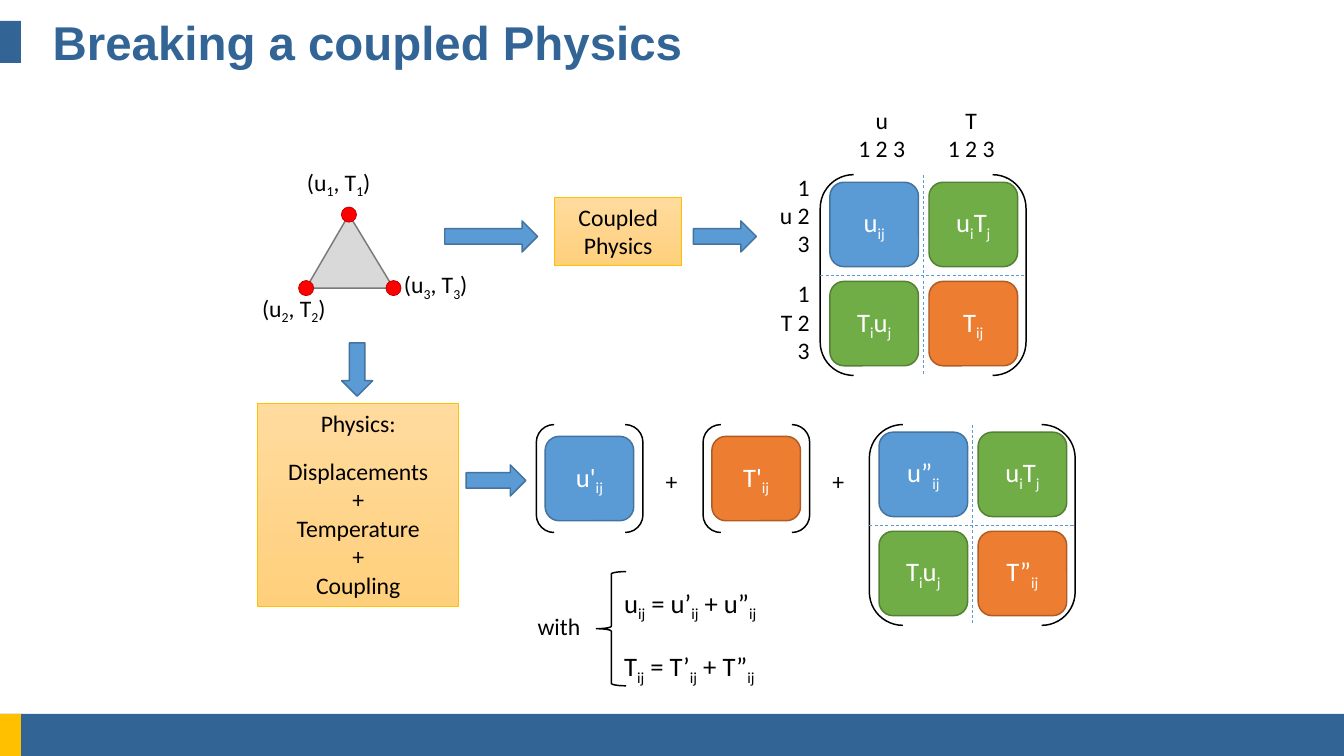
from lxml import etree
from pptx import Presentation
from pptx.dml.color import RGBColor
from pptx.enum.dml import MSO_LINE
from pptx.enum.shapes import MSO_CONNECTOR, MSO_SHAPE
from pptx.enum.text import MSO_ANCHOR, MSO_AUTO_SIZE, PP_ALIGN
from pptx.oxml.ns import qn
from pptx.util import Cm, Pt

BLACK = RGBColor(0x00, 0x00, 0x00)
WHITE = RGBColor(0xFF, 0xFF, 0xFF)
NAVY = RGBColor(0x32, 0x64, 0x96)
GOLD = RGBColor(0xFF, 0xC0, 0x00)
BLUE, BLUE_EDGE = RGBColor(0x5B, 0x9B, 0xD5), RGBColor(0x43, 0x73, 0x9E)
ORANGE, ORANGE_EDGE = RGBColor(0xED, 0x7D, 0x31), RGBColor(0xAF, 0x5C, 0x24)
GREEN, GREEN_EDGE = RGBColor(0x70, 0xAD, 0x47), RGBColor(0x53, 0x80, 0x35)
GRAY, GRAY_EDGE = RGBColor(0xD9, 0xD9, 0xD9), RGBColor(0x7A, 0x7A, 0x7A)
RED, RED_EDGE = RGBColor(0xFF, 0x00, 0x00), RGBColor(0xC0, 0x00, 0x00)
PEACH_TOP, PEACH_BOTTOM = RGBColor(0xFF, 0xDB, 0x9E), RGBColor(0xFF, 0xD0, 0x7C)

LEFT, CENTER, RIGHT = PP_ALIGN.LEFT, PP_ALIGN.CENTER, PP_ALIGN.RIGHT
TOP, MIDDLE = MSO_ANCHOR.TOP, MSO_ANCHOR.MIDDLE
NO_FIT, GROW = MSO_AUTO_SIZE.NONE, MSO_AUTO_SIZE.SHAPE_TO_FIT_TEXT
RECTANGLE, ROUNDED = MSO_SHAPE.RECTANGLE, MSO_SHAPE.ROUNDED_RECTANGLE
TRIANGLE, OVAL = MSO_SHAPE.ISOSCELES_TRIANGLE, MSO_SHAPE.OVAL
BRACKETS, BRACE = MSO_SHAPE.DOUBLE_BRACKET, MSO_SHAPE.LEFT_BRACE
ARROW, STRAIGHT, DASH = MSO_SHAPE.RIGHT_ARROW, MSO_CONNECTOR.STRAIGHT, MSO_LINE.DASH

TITLE_ONLY_LAYOUT = 5
CELL_WIDTH, CELL_HEIGHT, CELL_PITCH = 2.11, 2.01, 2.36
MATRIX_WIDTH, MATRIX_HEIGHT = 4.9, 4.78
ARROW_HEIGHT = 0.74


def add_shape(slide, kind, box, fill=None, edge=None, edge_width=1):
    """Add a flat preset shape in a box given in centimetres."""
    shape = slide.shapes.add_shape(kind, *map(Cm, box))
    shape.shadow.inherit = False
    if fill is None:
        shape.fill.background()
    else:
        shape.fill.solid()
        shape.fill.fore_color.rgb = fill
    if edge is None:
        shape.line.fill.background()
    else:
        shape.line.color.rgb = edge
        shape.line.width = Pt(edge_width)
    return shape


def write(text_frame, lines, size=16, color=BLACK, align=CENTER):
    """Write lines in which underscores enclose the subscripts."""
    for index, line in enumerate(lines):
        paragraph = text_frame.add_paragraph() if index else text_frame.paragraphs[0]
        paragraph.alignment = align
        paragraph.font.name = "Calibri"
        paragraph.font.size = Pt(size)
        paragraph.font.color.rgb = color
        for part, text in enumerate(line.split("_")):
            if text:
                run = paragraph.add_run()
                run.text = text
                if part % 2:
                    run._r.get_or_add_rPr().set("baseline", "-25000")


def add_label(slide, box, lines, size=16, align=LEFT):
    """Add an unwrapped text box."""
    text_frame = slide.shapes.add_textbox(*map(Cm, box)).text_frame
    text_frame.word_wrap = False
    text_frame.auto_size = GROW
    write(text_frame, lines, size, align=align)


def add_cell(slide, left, top, text, fill, edge):
    """Add one rounded matrix entry."""
    box = left, top, CELL_WIDTH, CELL_HEIGHT
    text_frame = add_shape(slide, ROUNDED, box, fill, edge).text_frame
    text_frame.margin_left = text_frame.margin_right = Cm(0.1)
    text_frame.vertical_anchor = MIDDLE
    write(text_frame, [text], 18, WHITE)


def add_divider(slide, bracket, begin_site, end_site):
    """Join two opposite sides of a bracket pair with a dashed line."""
    divider = slide.shapes.add_connector(STRAIGHT, 0, 0, 0, 0)
    divider.begin_connect(bracket, begin_site)
    divider.end_connect(bracket, end_site)
    divider.line.color.rgb = BLUE
    divider.line.width = Pt(0.5)
    divider.line.dash_style = DASH
    etree.SubElement(divider._element.spPr, qn("a:effectLst"))


def add_matrix(slide, left, top, displacement, temperature):
    """Add a bracketed two by two block matrix."""
    box = left, top, MATRIX_WIDTH, MATRIX_HEIGHT
    bracket = add_shape(slide, BRACKETS, box, edge=BLACK)
    add_divider(slide, bracket, 1, 3)
    add_divider(slide, bracket, 0, 2)
    cells = [
        (displacement, BLUE, BLUE_EDGE),
        ("u_i_T_j_", GREEN, GREEN_EDGE),
        ("T_i_u_j_", GREEN, GREEN_EDGE),
        (temperature, ORANGE, ORANGE_EDGE),
    ]
    for index, cell in enumerate(cells):
        row, column = divmod(index, 2)
        add_cell(slide, left + 0.23 + column * CELL_PITCH,
                 top + 0.18 + row * CELL_PITCH, *cell)


def add_matrix_headings(slide, left, top):
    """Number the columns and rows of the matrix at the given corner."""
    for name, column_left, row_top in (("u", 0.64, -0.18), ("T", 2.77, 2.36)):
        add_label(slide, (left + column_left, top - 1.77, 1.65, 1.63),
                  [name, "1 2 3"], align=CENTER)
        add_label(slide, (left - 1.22, top + row_top, 1.22, 2.31),
                  ["1", f"{name} 2", "3"], align=RIGHT)


def add_single_block(slide, left, top, text, fill, edge):
    """Add a bracketed single entry followed by a plus sign."""
    add_shape(slide, BRACKETS, (left, top, 2.54, 2.57), edge=BLACK)
    add_cell(slide, left + 0.21, top + 0.28, text, fill, edge)
    add_label(slide, (left + 2.83, top + 0.89, 0.79, 0.94), ["+"])


def add_element(slide, left, top, width, height):
    """Add the triangular element with its three labelled nodes."""
    apex = 0.49
    triangle = add_shape(slide, TRIANGLE, (left, top, width, height), GRAY, GRAY_EDGE)
    triangle.adjustments[0] = apex
    diameter = 0.36
    nodes = [
        (apex * width, 0, -0.23, -1.25),
        (0, height, -1.3, height),
        (width, height, width, 1.19),
    ]
    for number, (x, y, label_x, label_y) in enumerate(nodes, 1):
        dot = left + x - diameter / 2, top + y - diameter / 2, diameter, diameter
        add_shape(slide, OVAL, dot, RED, RED_EDGE, 0.5)
        add_label(slide, (left + label_x, top + label_y, 2.08, 0.94),
                  [f"(u_{number}_, T_{number}_)"])


def add_physics_box(slide, box, lines):
    """Add a peach box naming the physics and return its text frame."""
    shape = add_shape(slide, RECTANGLE, box, PEACH_TOP, GOLD, 0.5)
    shape.fill.gradient()
    shape.fill.gradient_angle = 270
    for stop, color in zip(shape.fill.gradient_stops, (PEACH_TOP, PEACH_BOTTOM)):
        stop.color.rgb = color
    shape.text_frame.vertical_anchor = TOP
    write(shape.text_frame, lines)
    return shape.text_frame


def add_definitions(slide, left, top):
    """Add the braced definitions of the split terms."""
    add_label(slide, (left, top + 0.84, 1.55, 0.94), ["with"])
    add_shape(slide, BRACE, (left + 1.65, top, 0.71, 2.72), edge=BLACK)
    for row, name in enumerate("uT"):
        add_label(slide, (left + 2.06, top + 0.23 + row * 1.52, 3.78, 1.02),
                  [f"{name}_ij_ = {name}’_ij_ + {name}”_ij_"], 18)


def add_arrow(slide, left, top, width, rotation=0):
    """Add a blue block arrow."""
    box = left, top, width, ARROW_HEIGHT
    add_shape(slide, ARROW, box, BLUE, BLUE_EDGE).rotation = rotation


def add_frame(slide, width, height, title):
    """Add the coloured bars and the slide title."""
    add_shape(slide, RECTANGLE, (0, height - 1, width, 1), NAVY)
    add_shape(slide, RECTANGLE, (0, height - 1, 0.5, 1), GOLD)
    add_shape(slide, RECTANGLE, (0, 0.5, 0.5, 1), NAVY)
    placeholder = slide.shapes.title
    placeholder.left, placeholder.top = Cm(1), Cm(0.5)
    placeholder.width, placeholder.height = Cm(width - 2), Cm(1)
    text_frame = placeholder.text_frame
    text_frame.text = title
    text_frame.auto_size = NO_FIT
    text_frame.vertical_anchor = MIDDLE
    paragraph = text_frame.paragraphs[0]
    paragraph.alignment = LEFT
    paragraph.font.name = "Arial"
    paragraph.font.size = Pt(32)
    paragraph.font.bold = True
    paragraph.font.color.rgb = NAVY


def main():
    """Build and save the slide."""
    presentation = Presentation()
    width, height = 32, 18
    presentation.slide_width, presentation.slide_height = Cm(width), Cm(height)
    layout = presentation.slide_layouts[TITLE_ONLY_LAYOUT]
    slide = presentation.slides.add_slide(layout)
    add_frame(slide, width, height, "Breaking a coupled Physics")

    add_element(slide, 7.29, 5.11, 2.08, 1.75)
    add_physics_box(slide, (13.21, 4.7, 3.02, 1.63), ["Coupled Physics"])
    add_matrix(slide, 19.53, 4.16, "u_ij_", "T_ij_")
    add_matrix_headings(slide, 19.53, 4.16)

    split_physics = add_physics_box(
        slide, (6.14, 9.6, 4.78, 4.83),
        ["Physics:", "Displacements", "+", "Temperature", "+", "Coupling"])
    split_physics.margin_left = split_physics.margin_right = Cm(0.1)
    split_physics.paragraphs[0].space_after = Pt(13.4)
    add_single_block(slide, 12.77, 10.11, "u'_ij_", BLUE, BLUE_EDGE)
    add_single_block(slide, 16.74, 10.11, "T'_ij_", ORANGE, ORANGE_EDGE)
    add_matrix(slide, 20.7, 10.11, "u”_ij_", "T”_ij_")
    add_definitions(slide, 12.55, 13.61)

    add_arrow(slide, 10.59, 5.26, 2.21)
    add_arrow(slide, 16.51, 5.26, 1.5)
    add_arrow(slide, 11.1, 11.07, 1.42)
    add_arrow(slide, 7.87, 8.43, 1.27, 90)
    presentation.save("out.pptx")


if __name__ == "__main__":
    main()
